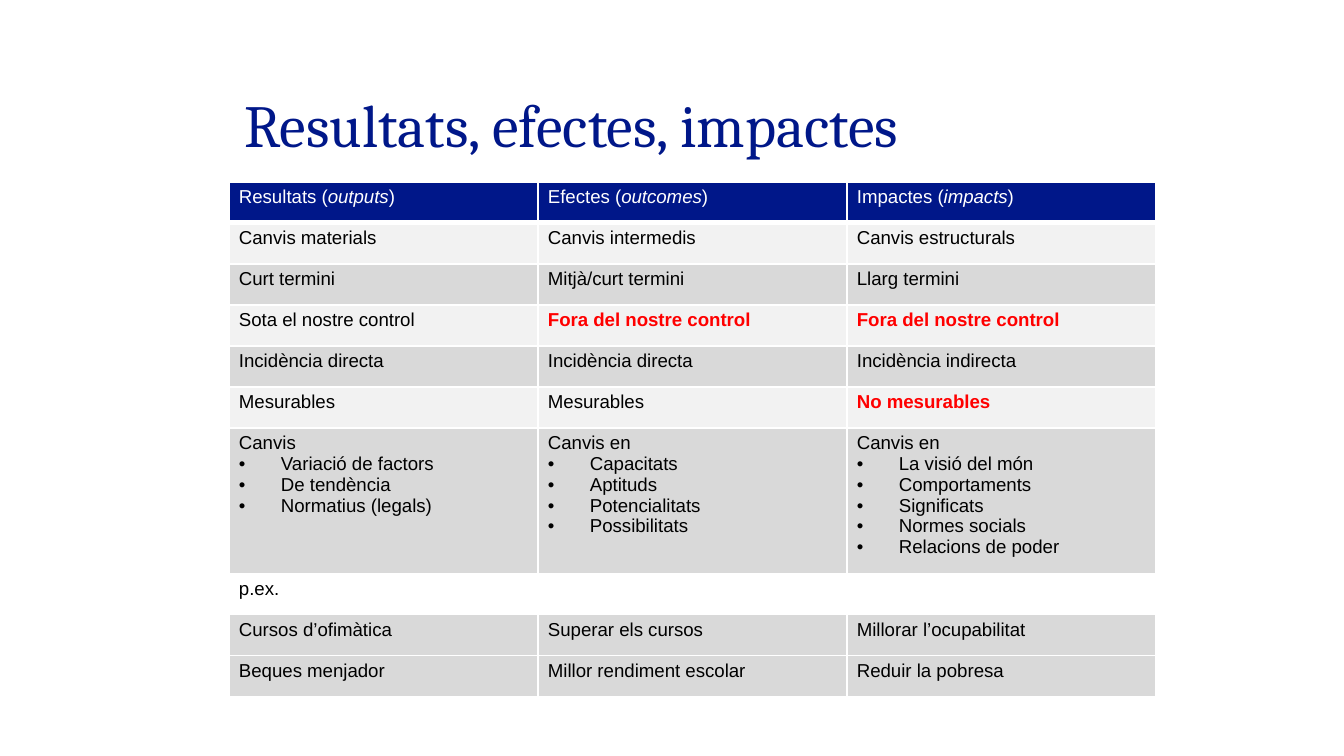
from dataclasses import dataclass
from lxml.etree import SubElement
from pptx import Presentation
from pptx.dml.color import RGBColor as Rgb
from pptx.enum.text import MSO_ANCHOR as Anchor
from pptx.oxml.ns import qn
from pptx.util import Emu, Pt

SCALE = 914400 / 134.4
HEX = {"navy": "001789", "white": "FFFFFF", "black": "000000",
       "red": "FF0000", "light": "F2F2F2", "grey": "D9D9D9"}
WIDE, HIGH = 1344, 756
COL, ROW, TALL = 309, 41, 146
PAD_X, PAD_Y, INDENT = 10, 5, 42


@dataclass
class Entry:
    text: str = ""
    term: str = ""
    items: tuple[str, ...] = ()
    hot: bool = False


@dataclass
class Band:
    fill: str
    cells: list[Entry]
    high: int = ROW
    ink: str = "black"
    rule: int = 1


def plain(fill: str, *texts: str) -> Band:
    return Band(fill, [Entry(text) for text in texts])


BANDS = [
    Band("navy", [Entry("Resultats", "outputs"), Entry("Efectes", "outcomes"),
                  Entry("Impactes", "impacts")], ink="white", rule=3),
    plain("light", "Canvis materials", "Canvis intermedis", "Canvis estructurals"),
    plain("grey", "Curt termini", "Mitjà/curt termini", "Llarg termini"),
    Band("light", [Entry("Sota el nostre control"),
                   Entry("Fora del nostre control", hot=True),
                   Entry("Fora del nostre control", hot=True)]),
    plain("grey", "Incidència directa", "Incidència directa", "Incidència indirecta"),
    Band("light", [Entry("Mesurables"), Entry("Mesurables"),
                   Entry("No mesurables", hot=True)]),
    Band("grey", [
        Entry("Canvis", items=("Variació de factors", "De tendència",
                               "Normatius (legals)")),
        Entry("Canvis en", items=("Capacitats", "Aptituds", "Potencialitats",
                                  "Possibilitats")),
        Entry("Canvis en", items=("La visió del món", "Comportaments", "Significats",
                                  "Normes socials", "Relacions de poder")),
    ], high=TALL),
    plain("", "p.ex.", "", ""),
    plain("grey", "Cursos d’ofimàtica", "Superar els cursos", "Millorar l’ocupabilitat"),
    plain("grey", "Beques menjador", "Millor rendiment escolar", "Reduir la pobresa"),
]


def px(count: int) -> Emu:
    return Emu(round(count * SCALE))


def style(run, size: int, face: str, ink: str) -> None:
    run.font.size, run.font.name = Pt(size), face
    run.font.color.rgb = Rgb.from_string(HEX[ink])


def edge(cell, rule: int) -> None:
    """Draw white borders, with the bottom one as thick as rule."""
    props = cell._tc.get_or_add_tcPr()
    for side, width in (("L", 1), ("R", 1), ("T", 1), ("B", rule)):
        line = SubElement(props, qn(f"a:ln{side}"), w=str(Pt(width)))
        fill = SubElement(line, qn("a:solidFill"))
        SubElement(fill, qn("a:srgbClr"), val=HEX["white"])


def bullet(para) -> None:
    props = para._p.get_or_add_pPr()
    props.set("marL", str(px(INDENT)))
    props.set("indent", str(-px(INDENT)))
    SubElement(props, qn("a:buFont"), typeface="Arial")
    SubElement(props, qn("a:buChar"), char="•")


def write(cell, entry: Entry, ink: str) -> None:
    frame = cell.text_frame
    frame.text = "\n".join((entry.text, *entry.items))
    first, *rest = frame.paragraphs
    if entry.term:
        for text, slant in ((" (", False), (entry.term, True), (")", False)):
            run = first.add_run()
            run.text, run.font.italic = text, slant
    for para in rest:
        bullet(para)
    for para in frame.paragraphs:
        for run in para.runs:
            style(run, 10, "Arial", "red" if entry.hot else ink)
            run.font.bold = entry.hot
    if not entry.text:
        # An empty cell must not stretch its row
        SubElement(first._p, qn("a:endParaRPr"), sz="1000")


def title(slide, text: str) -> None:
    box = slide.shapes.add_textbox(px(231), px(38), px(1072), px(129))
    frame = box.text_frame
    frame.word_wrap, frame.vertical_anchor = True, Anchor.BOTTOM
    frame.text = text
    para = frame.paragraphs[0]
    para.line_spacing = 0.9
    style(para.runs[0], 32, "Cambria", "navy")


def grid(slide, bands: list[Band]) -> None:
    cols = len(bands[0].cells)
    high = sum(band.high for band in bands)
    table = slide.shapes.add_table(len(bands), cols, px(229), px(182),
                                   px(COL * cols), px(high)).table
    table.first_row = table.horz_banding = False
    for col in table.columns:
        col.width = px(COL)
    for row, band in zip(table.rows, bands):
        row.height = px(band.high)
        for cell, entry in zip(row.cells, band.cells):
            cell.margin_left = cell.margin_right = px(PAD_X)
            cell.margin_top = cell.margin_bottom = px(PAD_Y)
            edge(cell, band.rule)
            if band.fill:
                cell.fill.solid()
                cell.fill.fore_color.rgb = Rgb.from_string(HEX[band.fill])
            else:
                cell.fill.background()
            write(cell, entry, band.ink)


def main() -> None:
    deck = Presentation()
    deck.slide_width, deck.slide_height = px(WIDE), px(HIGH)
    slide = deck.slides.add_slide(deck.slide_layouts[6])
    title(slide, "Resultats, efectes, impactes")
    grid(slide, BANDS)
    deck.save("out.pptx")


if __name__ == "__main__":
    main()
